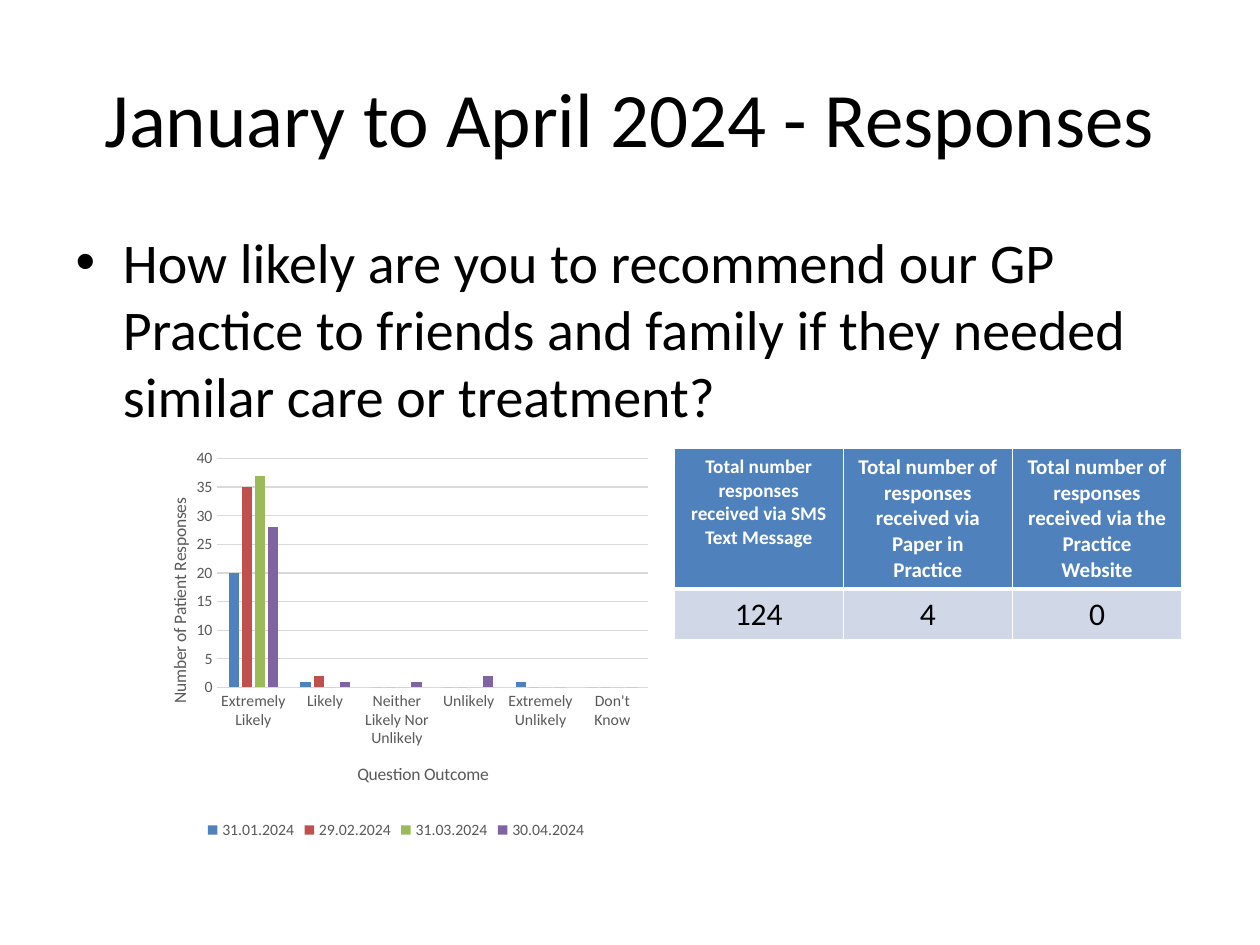
import pptx
import pptx.chart.data
import pptx.dml.color
import pptx.enum.chart
import pptx.enum.text
import pptx.oxml
import pptx.oxml.ns
import pptx.util

Cm, Pt = pptx.util.Cm, pptx.util.Pt
ALIGN = pptx.enum.text.PP_ALIGN
XL = pptx.enum.chart

FACE = "Calibri"
TITLE = "January to April 2024 - Responses"
BODY = ("How likely are you to recommend our GP Practice to friends and "
        "family if they needed similar care or treatment?")
CATS = ["Extremely Likely", "Likely", "Neither Likely Nor Unlikely",
        "Unlikely", "Extremely Unlikely", "Don't Know"]
SERIES = [
    ("31.01.2024", "4F81BD", (20, 1, 0, 0, 1, 0)),
    ("29.02.2024", "C0504D", (35, 2, 0, 0, 0, 0)),
    ("31.03.2024", "9BBB59", (37, 0, 0, 0, 0, 0)),
    ("30.04.2024", "8064A2", (28, 1, 1, 2, 0, 0)),
]
TOTALS = [
    ("Total number responses received via SMS Text Message", 11, "124"),
    ("Total number of responses received via Paper in Practice", 12, "4"),
    ("Total number of responses received via the Practice Website", 12, "0"),
]
GREY, RULE = "595959", "D9D9D9"


def tint(text):
    return pptx.dml.color.RGBColor.from_string(text)


def style(font, size, color, bold=False):
    font.name, font.size, font.bold = FACE, Pt(size), bold
    font.color.rgb = tint(color)


def fill(part, color):
    part.fill.solid()
    part.fill.fore_color.rgb = tint(color)


def stroke(line, color):
    line.width = Pt(0.75)
    line.color.rgb = tint(color)


def place(shape, left, top, width, height):
    shape.left, shape.top = Cm(left), Cm(top)
    shape.width, shape.height = Cm(width), Cm(height)


def layout(part, **spots):
    """Give a chart part a fixed spot, in fractions of the chart area."""
    inner = '<c:layoutTarget val="inner"/>' if "w" in spots else ""
    modes = "".join(f'<c:{key}Mode val="edge"/>' for key in "xy")
    sizes = "".join(f'<c:{key} val="{num}"/>' for key, num in spots.items())
    node = pptx.oxml.parse_xml(
        f'<c:layout {pptx.oxml.ns.nsdecls("c")}><c:manualLayout>'
        f"{inner}{modes}{sizes}</c:manualLayout></c:layout>")
    for old in part.findall(pptx.oxml.ns.qn("c:layout")):
        part.remove(old)
    first = part.find(pptx.oxml.ns.qn("c:tx"))
    part.insert(0 if first is None else part.index(first) + 1, node)


def label(axis, text, x, y):
    para = axis.axis_title.text_frame.paragraphs[0]
    para.text = text
    style(para.font, 10, GREY)
    layout(axis.axis_title._element, x=x, y=y)
    style(axis.tick_labels.font, 9, GREY)
    axis.major_tick_mark = axis.minor_tick_mark = XL.XL_TICK_MARK.NONE


def add_bars(slide):
    data = pptx.chart.data.CategoryChartData()
    data.categories = CATS
    for name, _, vals in SERIES:
        data.add_series(name, vals)
    chart = slide.shapes.add_chart(
        XL.XL_CHART_TYPE.COLUMN_CLUSTERED,
        Cm(2.69), Cm(8.92), Cm(10.59), Cm(8.1), data).chart
    style(chart.font, 10, "000000")
    chart.has_title = False
    chart.has_legend = True
    chart.legend.position = XL.XL_LEGEND_POSITION.BOTTOM
    chart.legend.include_in_layout = False
    style(chart.legend.font, 9, GREY)

    plot = chart.plots[0]
    plot.gap_width, plot.overlap = 219, -27
    plot.vary_by_categories = False
    for bars, (_, color, _) in zip(plot.series, SERIES):
        fill(bars.format, color)
        bars.invert_if_negative = False

    cat, val = chart.category_axis, chart.value_axis
    label(cat, "Question Outcome", 0.42, 0.79)
    label(val, "Number of Patient Responses", 0.06, 0.13)
    stroke(cat.format.line, RULE)
    stroke(val.major_gridlines.format.line, RULE)
    val.format.line.fill.background()
    val.minimum_scale, val.maximum_scale, val.major_unit = 0, 40, 5
    layout(chart._chartSpace.chart.plotArea, x=0.16, y=0.04, w=0.82, h=0.57)


def edge(cell, thick):
    props = cell._tc.get_or_add_tcPr()
    for spot, side in enumerate("LRTB"):
        width = Pt(thick.get(side, 1))
        props.insert(spot, pptx.oxml.parse_xml(
            f'<a:ln{side} {pptx.oxml.ns.nsdecls("a")} w="{width}">'
            '<a:solidFill><a:srgbClr val="FFFFFF"/></a:solidFill>'
            f"</a:ln{side}>"))


def write(cell, text, size, color, back, bold, thick):
    cell.text = text
    para = cell.text_frame.paragraphs[0]
    para.alignment = ALIGN.CENTER
    style(para.font, size, color, bold)
    fill(cell, back)
    edge(cell, thick)


def add_totals(slide):
    grid = slide.shapes.add_table(
        2, len(TOTALS), Cm(13.59), Cm(9.04), Cm(10.23), Cm(3.8)).table
    for row, height in zip(grid.rows, (2.8, 1)):
        row.height = Cm(height)
    for col, (head, size, count) in enumerate(TOTALS):
        grid.columns[col].width = Cm(3.41)
        write(grid.cell(0, col), head, size, "FFFFFF", "4F81BD", True, {"B": 3})
        write(grid.cell(1, col), count, 18, "000000", "D0D8E8", False, {"T": 3})


def main():
    deck = pptx.Presentation()
    deck.slide_width, deck.slide_height = Cm(25.4), Cm(19.05)
    slide = deck.slides.add_slide(deck.slide_layouts[1])
    title, body = slide.placeholders
    place(title, 1.27, 0.76, 22.86, 3.18)
    place(body, 1.27, 4.45, 22.86, 12.57)
    for shape, text, size, align in ((title, TITLE, 44, ALIGN.CENTER),
                                     (body, BODY, 32, ALIGN.LEFT)):
        shape.text = text
        para = shape.text_frame.paragraphs[0]
        para.alignment, para.space_before = align, Pt(0)
        style(para.font, size, "000000")
    add_bars(slide)
    add_totals(slide)
    deck.save("out.pptx")


if __name__ == "__main__":
    main()
